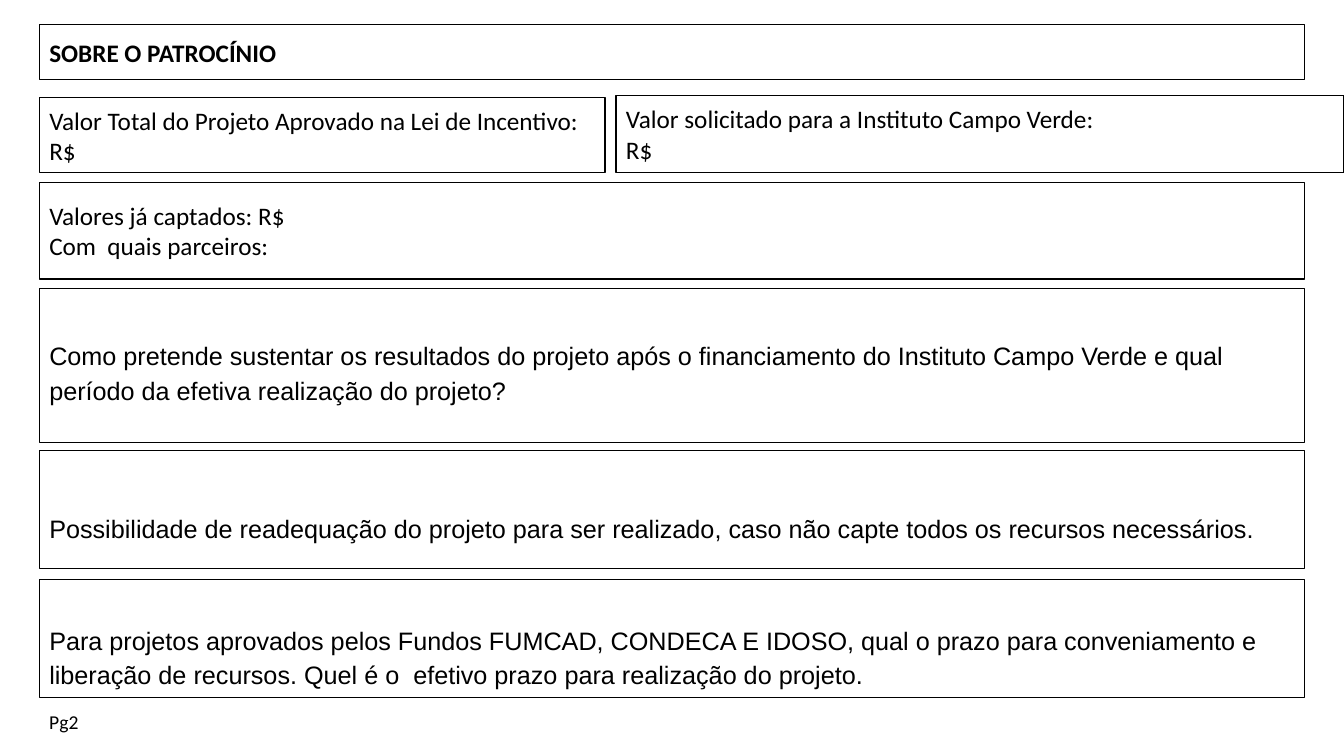
"""Builds the sponsorship page of a project application form."""
from pptx import Presentation
from pptx.dml.color import RGBColor
from pptx.enum.shapes import MSO_SHAPE
from pptx.enum.text import MSO_ANCHOR, PP_ALIGN
from pptx.util import Inches, Pt

COLORS = {"ink": "000000"}
INK = RGBColor.from_string(COLORS["ink"])
LEFT, FULL = 0.39, 12.55

form = Presentation()
form.slide_width, form.slide_height = Inches(13.33), Inches(7.5)
page = form.slides.add_slide(form.slide_layouts[6])


def write(frame, lines, font, size=18, bold=False, spacing=1.0):
    frame.text = "\n".join(lines)
    for line in frame.paragraphs:
        line.alignment = PP_ALIGN.LEFT
        line.line_spacing = spacing
        line.font.name, line.font.size = font, Pt(size)
        line.font.bold = bold
        line.font.color.rgb = INK


def add_field(left, top, width, height, lines, font="Calibri", bold=False,
              spacing=1.0, inset=0.05):
    field = page.shapes.add_shape(MSO_SHAPE.RECTANGLE, Inches(left), Inches(top),
                                  Inches(width), Inches(height))
    field.shadow.inherit = False
    field.fill.background()
    field.line.color.rgb = INK
    field.line.width = Pt(1)
    frame = field.text_frame
    frame.word_wrap = True
    frame.vertical_anchor = MSO_ANCHOR.MIDDLE
    frame.margin_top = Inches(inset)
    write(frame, lines, font, bold=bold, spacing=spacing)


add_field(LEFT, 0.24, FULL, 0.55, ["SOBRE O PATROCÍNIO"], bold=True)

amounts = [
    (LEFT, 0.97, 5.61, 0.74, ["Valor Total do Projeto Aprovado na Lei de Incentivo: R$"]),
    (6.11, 0.95, 7.22, 0.76, ["Valor solicitado para a Instituto Campo Verde:", "R$"]),
    (LEFT, 1.81, FULL, 0.96, ["Valores já captados: R$", "Com  quais parceiros:"]),
]
for left, top, width, height, lines in amounts:
    add_field(left, top, width, height, lines)

questions = [
    (2.86, 1.53, 0.15, "Como pretende sustentar os resultados do projeto após o financiamento "
     "do Instituto Campo Verde e qual período da efetiva realização do projeto?"),
    (4.47, 1.17, 0.38, "Possibilidade de readequação do projeto para ser realizado, "
     "caso não capte todos os recursos necessários."),
    (5.75, 1.17, 0.38, "Para projetos aprovados pelos Fundos FUMCAD, CONDECA E IDOSO, qual o prazo "
     "para conveniamento e liberação de recursos. Quel é o  efetivo prazo para "
     "realização do projeto."),
]
for top, height, inset, question in questions:
    add_field(LEFT, top, FULL, height, [question], font="Arial", spacing=1.15, inset=inset)

page_label = page.shapes.add_textbox(Inches(LEFT), Inches(6.99), Inches(0.5), Inches(0.34))
page_label.text_frame.word_wrap = False
write(page_label.text_frame, ["Pg2"], "Calibri", size=14)

form.save("out.pptx")
